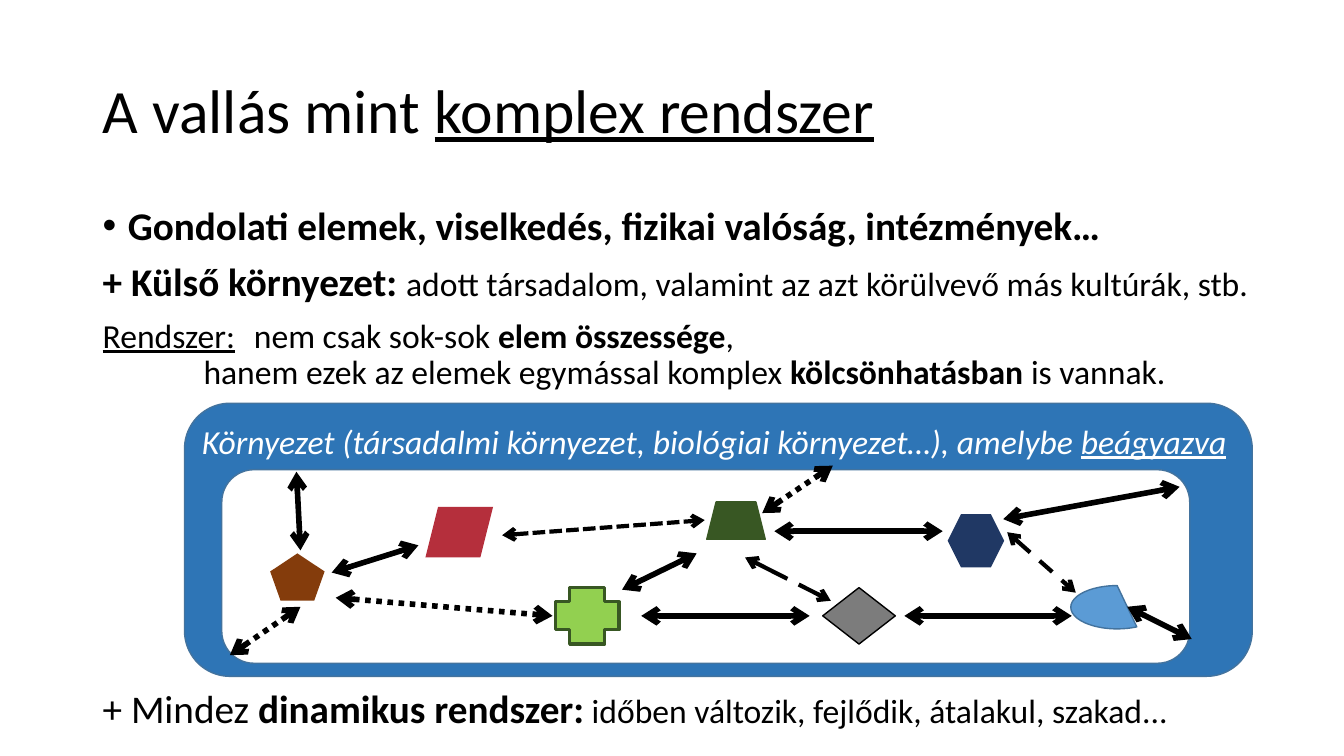
from lxml import etree
from pptx import Presentation
from pptx import util as u
from pptx.dml.color import RGBColor
from pptx.enum import dml, shapes, text
from pptx.oxml import ns

SHAPE = shapes.MSO_SHAPE
DASH = dml.MSO_LINE


def color(hex_code):
    return RGBColor.from_string(hex_code)


class SystemSlide:
    font = "Calibri"
    ink = "000000"
    frame = "43739E"

    def __init__(self, deck):
        self.page = deck.slides.add_slide(deck.slide_layouts[5])

    def fill_para(self, para, spans, size, ink=ink, spacing=0.9, before=0, bullet=None):
        """Fill a paragraph with (text, format) spans; a format may override the size."""
        para.alignment = text.PP_ALIGN.LEFT
        para.line_spacing = spacing
        para.space_before = u.Pt(before)
        if bullet:
            props = para._p.get_or_add_pPr()
            props.set("marL", str(u.Inches(0.25)))
            props.set("indent", str(-u.Inches(0.25)))
            etree.SubElement(props, ns.qn("a:buFont")).set("typeface", "Arial")
            etree.SubElement(props, ns.qn("a:buChar")).set("char", bullet)
        para.font.name = self.font
        para.font.color.rgb = color(ink)
        for words, look in spans:
            for number, line in enumerate(words.split("\n")):
                if number:
                    para.add_line_break()
                span = para.add_run()
                span.text = line
                span.font.size = u.Pt(look.get("size", size))
                span.font.bold = look.get("bold")
                span.font.italic = look.get("italic")
                span.font.underline = look.get("underline")

    def title(self, left, top, width, height, spans):
        box = self.page.shapes.title
        box.left, box.top = u.Inches(left), u.Inches(top)
        box.width, box.height = u.Inches(width), u.Inches(height)
        box.text_frame.vertical_anchor = text.MSO_ANCHOR.MIDDLE
        box.text_frame.auto_size = text.MSO_AUTO_SIZE.NONE
        self.fill_para(box.text_frame.paragraphs[0], spans, 44)

    def text_box(self, left, top, width, height, paragraphs):
        """Add a text box of (spans, size, bullet) paragraphs."""
        box = self.page.shapes.add_textbox(*map(u.Inches, (left, top, width, height)))
        frame = box.text_frame
        frame.word_wrap = True
        for number, (spans, size, bullet) in enumerate(paragraphs):
            para = frame.add_paragraph() if number else frame.paragraphs[0]
            self.fill_para(para, spans, size, before=10 if number else 0, bullet=bullet)

    def shape(self, kind, left, top, width, height, fill, line=None, weight=1):
        shape = self.page.shapes.add_shape(kind, *map(u.Inches, (left, top, width, height)))
        shape.shadow.inherit = False
        shape.fill.solid()
        shape.fill.fore_color.rgb = color(fill)
        if line:
            shape.line.color.rgb = color(line)
            shape.line.width = u.Pt(weight)
        else:
            shape.line.fill.background()
        return shape

    def label(self, shape, spans, size, ink, inset):
        frame = shape.text_frame
        frame.word_wrap = True
        frame.vertical_anchor = text.MSO_ANCHOR.TOP
        frame.margin_left = frame.margin_right = u.Inches(inset)
        frame.margin_top = frame.margin_bottom = u.Inches(inset)
        self.fill_para(frame.paragraphs[0], spans, size, ink, spacing=1.0)

    def double_arrow(self, x1, y1, x2, y2, weight=4, dash=None):
        arrow = self.page.shapes.add_connector(
            shapes.MSO_CONNECTOR.STRAIGHT, *map(u.Inches, (x1, y1, x2, y2)))
        arrow.line.color.rgb = color(self.ink)
        arrow.line.width = u.Pt(weight)
        if dash:
            arrow.line.dash_style = dash
        line = arrow.line._get_or_add_ln()
        for end in ("a:headEnd", "a:tailEnd"):
            etree.SubElement(line, ns.qn(end)).set("type", "arrow")
        etree.SubElement(arrow._element.spPr, ns.qn("a:effectLst"))


def main():
    deck = Presentation()
    deck.slide_width, deck.slide_height = u.Inches(13.33), u.Inches(7.5)
    slide = SystemSlide(deck)
    bold, underline, plain = {"bold": True}, {"underline": True}, {}

    slide.title(0.92, 0.4, 11.5, 1.45,
                [("A vallás mint ", plain), ("komplex rendszer", underline)])
    slide.text_box(0.92, 2, 12.18, 2, [
        ([("Gondolati elemek, viselkedés, fizikai valóság, intézmények…", bold)], 28, "•"),
        ([("+ Külső környezet: ", {"bold": True, "size": 28}),
          ("adott társadalom, valamint az azt körülvevő más kultúrák, stb.", plain)], 24, None),
        ([("Rendszer:", underline),
          ("\tnem csak sok-sok ", plain),
          ("elem összessége", bold),
          (",\n\t\thanem ezek az elemek egymással komplex ", plain),
          ("kölcsönhatásban", bold),
          (" is vannak.", plain)], 24, None),
    ])
    slide.text_box(0.92, 6.79, 12.18, 0.58, [
        ([("+ Mindez ", plain),
          ("dinamikus rendszer:", bold),
          (" időben változik, fejlődik, átalakul, szakad...", {"size": 24})], 28, None),
    ])

    environment = slide.shape(SHAPE.ROUNDED_RECTANGLE, 1.83, 4, 10.59, 2.71,
                              "2E75B6", slide.frame)
    slide.label(environment, [
        ("Környezet (társadalmi környezet, biológiai környezet…), amelybe ", {"italic": True}),
        ("beágyazva", {"italic": True, "underline": True}),
    ], 24, "FFFFFF", 0.04)
    slide.shape(SHAPE.ROUNDED_RECTANGLE, 2.2, 4.66, 9.6, 1.92, "FFFFFF", slide.frame)

    elements = [
        (SHAPE.REGULAR_PENTAGON, 2.68, 5.49, 0.54, 0.47, "843C0C"),
        (SHAPE.HEXAGON, 9.4, 5.1, 0.56, 0.53, "203864"),
        (SHAPE.CROSS, 5.51, 5.83, 0.63, 0.56, "92D050", "385723", 2.25),
        (SHAPE.TRAPEZOID, 7.01, 4.98, 0.58, 0.37, "385723", "385723"),
        (SHAPE.CHORD, 10.62, 5.81, 0.92, 0.43, "5B9BD5", slide.frame),
        (SHAPE.PARALLELOGRAM, 4.22, 5.03, 0.67, 0.5, "B52F3C"),
        (SHAPE.DIAMOND, 8.16, 5.83, 0.72, 0.56, "7C7C7C", slide.ink),
    ]
    for element in elements:
        slide.shape(*element)

    interactions = [
        (6.36, 6.11, 8.03, 6.11),
        (7.68, 5.27, 9.35, 5.27),
        (4.98, 5.31, 6.99, 5.16, 3, DASH.SQUARE_DOT),
        (3.29, 5.68, 4.15, 5.41),
        (2.98, 5.46, 2.94, 4.68),
        (3.33, 5.93, 5.48, 6.11, 4, DASH.ROUND_DOT),
        (8.97, 6.11, 10.63, 6.11),
        (6.17, 5.85, 6.91, 5.49),
        (7.39, 5.53, 8.24, 5.96, 3, DASH.LONG_DASH),
        (9.99, 5.28, 10.67, 5.88, 3, DASH.DASH),
        (9.95, 5.15, 11.7, 4.83),
        (2.28, 6.5, 2.98, 6.02, 4, DASH.ROUND_DOT),
        (11.82, 6.34, 11.18, 6.02),
        (7.56, 5.09, 8.26, 4.62, 4, DASH.ROUND_DOT),
    ]
    for interaction in interactions:
        slide.double_arrow(*interaction)

    deck.save("out.pptx")


if __name__ == "__main__":
    main()
